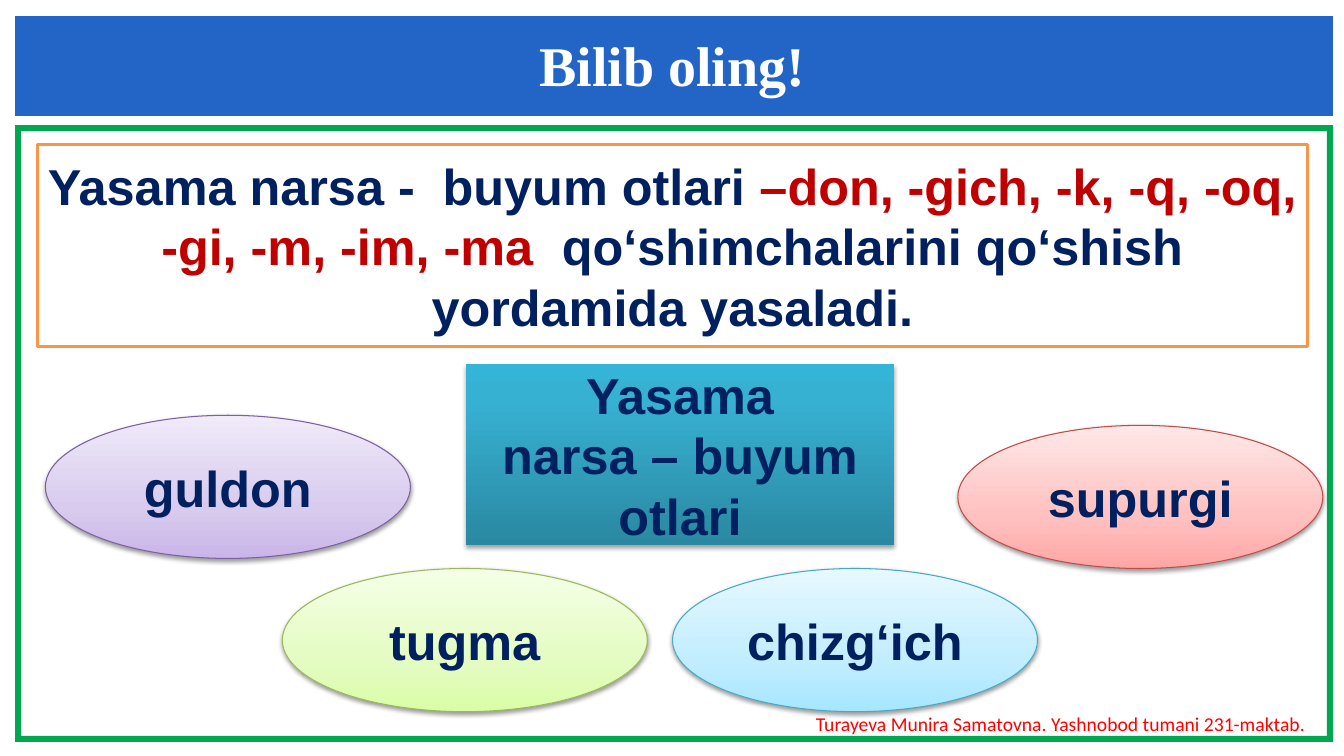
"""Build the lesson slide on Uzbek derived nouns for things."""
from dataclasses import dataclass

from lxml import etree
from pptx import Presentation
from pptx import util as u
from pptx.dml.color import RGBColor
from pptx.enum import shapes, text
from pptx.oxml.ns import qn

TITLE = "Bilib oling!"
RULE = [
    ("Yasama narsa -  buyum otlari ", "navy"),
    ("–don, -gich, -k, -q, -oq, -gi, -m, -im, -ma  ", "crimson"),
    ("qo‘shimchalarini qo‘shish yordamida yasaladi.", "navy"),
]
TOPIC = ["Yasama", "narsa – buyum otlari"]
CREDIT = "Turayeva Munira Samatovna. Yashnobod tumani 231-maktab."
EXAMPLES = [
    ("guldon", 45, 412, "purple"),
    ("tugma", 280, 564, "green"),
    ("chizg‘ich", 667, 564, "blue"),
    ("supurgi", 950, 422, "red"),
]

PX = u.Inches(1) // 100
SLIDE = (1333, 750)
BANNER = (15, 16, 1307, 99)
FRAME = (15, 124, 1307, 612)
FRAME_WIDTH = 6
TITLE_BOX = (167, 30, 1000, 67)
RULE_BOX = (37, 143, 1260, 201)
TOPIC_BOX = (462, 361, 425, 180)
CREDIT_BOX = (792, 706, 520, 24)
OVAL_SIZE = (362, 142)


@dataclass(frozen=True)
class Theme:
    """Colours, gradients, fonts and type sizes."""
    white = "FFFFFF"
    banner = "2365C7"
    frame = "00A650"
    navy = "002060"
    crimson = "C00000"
    orange = "F79646"
    credit = "FF0000"
    shadow = "000000"
    topic = [(0, "2A88A2"), (80, "37B1D2"), (100, "34B4D6")]
    ovals = {
        "purple": ("7D60A0", ["C9B5E8", "D8CBEE", "F0EAF9"]),
        "green": ("98B955", ["DAFDA7", "E4FCC2", "F5FFE7"]),
        "blue": ("46AAC5", ["A7E6FF", "C1EDFF", "E7F8FF"]),
        "red": ("BF4C48", ["FFA6A5", "FFC0BF", "FFE7E7"]),
    }
    oval_stops = (0, 35, 100)
    title_font = ("Times New Roman", 40, True)
    body_font = ("Arial", 36, True)
    credit_font = ("Calibri", 14, False)


THEME = Theme()


def rgb(value):
    return RGBColor.from_string(value)


def emu(box):
    return [length * PX for length in box]


def add_color(parent, value):
    return etree.SubElement(parent, qn("a:srgbClr"), val=value)


def add_shape(slide, kind, box, fill=None, line=None, width=0.75):
    shape = slide.shapes.add_shape(kind, *emu(box))
    shape.shadow.inherit = False
    if fill:
        shape.fill.solid()
        shape.fill.fore_color.rgb = rgb(fill)
    if line:
        shape.line.color.rgb = rgb(line)
        shape.line.width = u.Pt(width)
    else:
        shape.line.fill.background()
    return shape


def add_gradient(shape, stops):
    shape.fill.gradient()
    shape.fill.gradient_angle = 90
    stop_list = next(shape.element.spPr.iter(qn("a:gsLst")))
    for stop in list(stop_list):
        stop_list.remove(stop)
    for position, color in stops:
        stop = etree.SubElement(stop_list, qn("a:gs"), pos=str(position * 1000))
        add_color(stop, color)


def add_shadow(shape, opacity, distance):
    effects = shape.element.spPr.find(qn("a:effectLst"))
    shadow = etree.SubElement(
        effects, qn("a:outerShdw"), blurRad=str(u.Pt(3.1)),
        dist=str(u.Pt(distance)), dir="5400000", rotWithShape="0")
    color = add_color(shadow, THEME.shadow)
    etree.SubElement(color, qn("a:alpha"), val=str(opacity * 1000))


def style(paragraph, font, color):
    paragraph.alignment = text.PP_ALIGN.CENTER
    name, size, bold = font
    paragraph.font.name = name
    paragraph.font.size = u.Pt(size)
    paragraph.font.bold = bold
    paragraph.font.color.rgb = rgb(color)


def write(shape, lines, font, color):
    frame = shape.text_frame
    frame.word_wrap = True
    frame.vertical_anchor = text.MSO_ANCHOR.MIDDLE
    frame.text = "\n".join(lines)
    for paragraph in frame.paragraphs:
        style(paragraph, font, color)


def add_label(slide, box, line, font, color):
    label = slide.shapes.add_textbox(*emu(box))
    write(label, [line], font, color)
    frame = label.text_frame
    frame.vertical_anchor = text.MSO_ANCHOR.TOP
    frame.margin_left = frame.margin_right = 0
    frame.margin_top = frame.margin_bottom = 0


def add_rule(slide):
    panel = add_shape(slide, shapes.MSO_SHAPE.RECTANGLE, RULE_BOX,
                      THEME.white, THEME.orange, 2)
    write(panel, [""], THEME.body_font, THEME.navy)
    paragraph = panel.text_frame.paragraphs[0]
    for words, color in RULE:
        run = paragraph.add_run()
        run.text = words
        run.font.color.rgb = rgb(getattr(THEME, color))


def add_topic(slide):
    panel = add_shape(slide, shapes.MSO_SHAPE.RECTANGLE, TOPIC_BOX)
    add_gradient(panel, THEME.topic)
    add_shadow(panel, 35, 1.8)
    write(panel, TOPIC, THEME.body_font, THEME.navy)


def add_example(slide, word, left, top, tone):
    line, colors = THEME.ovals[tone]
    oval = add_shape(slide, shapes.MSO_SHAPE.OVAL,
                     (left, top, *OVAL_SIZE), line=line)
    add_gradient(oval, zip(THEME.oval_stops, colors))
    add_shadow(oval, 38, 1.6)
    write(oval, [word], THEME.body_font, THEME.navy)


def main():
    presentation = Presentation()
    presentation.slide_width, presentation.slide_height = emu(SLIDE)
    slide = presentation.slides.add_slide(presentation.slide_layouts[6])
    border = add_shape(slide, shapes.MSO_SHAPE.FRAME, FRAME, THEME.frame)
    border.adjustments[0] = FRAME_WIDTH / min(FRAME[2:])
    add_shape(slide, shapes.MSO_SHAPE.RECTANGLE, BANNER, THEME.banner)
    add_label(slide, TITLE_BOX, TITLE, THEME.title_font, THEME.white)
    add_topic(slide)
    add_rule(slide)
    for example in EXAMPLES:
        add_example(slide, *example)
    add_label(slide, CREDIT_BOX, CREDIT, THEME.credit_font, THEME.credit)
    presentation.save("out.pptx")


if __name__ == "__main__":
    main()
